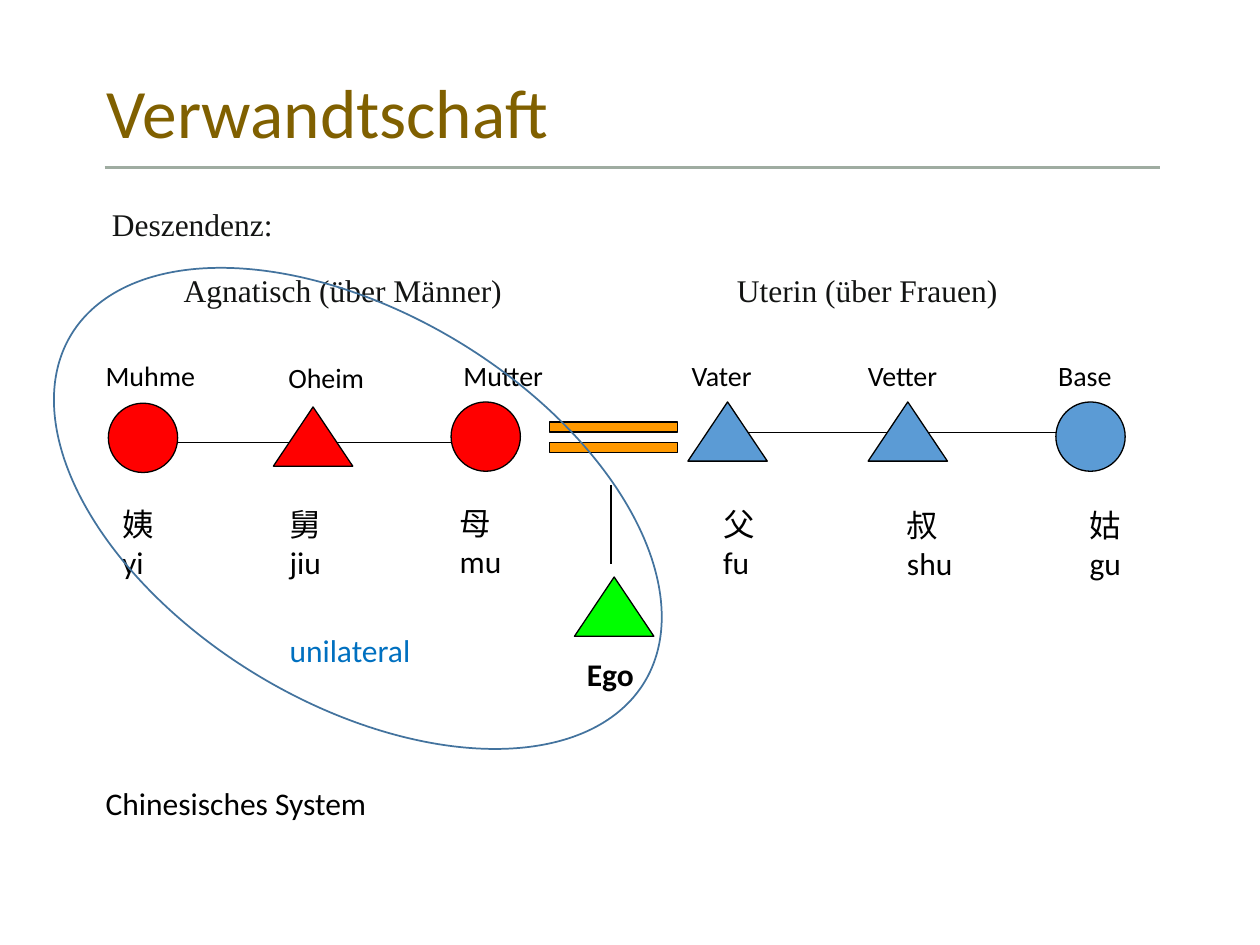
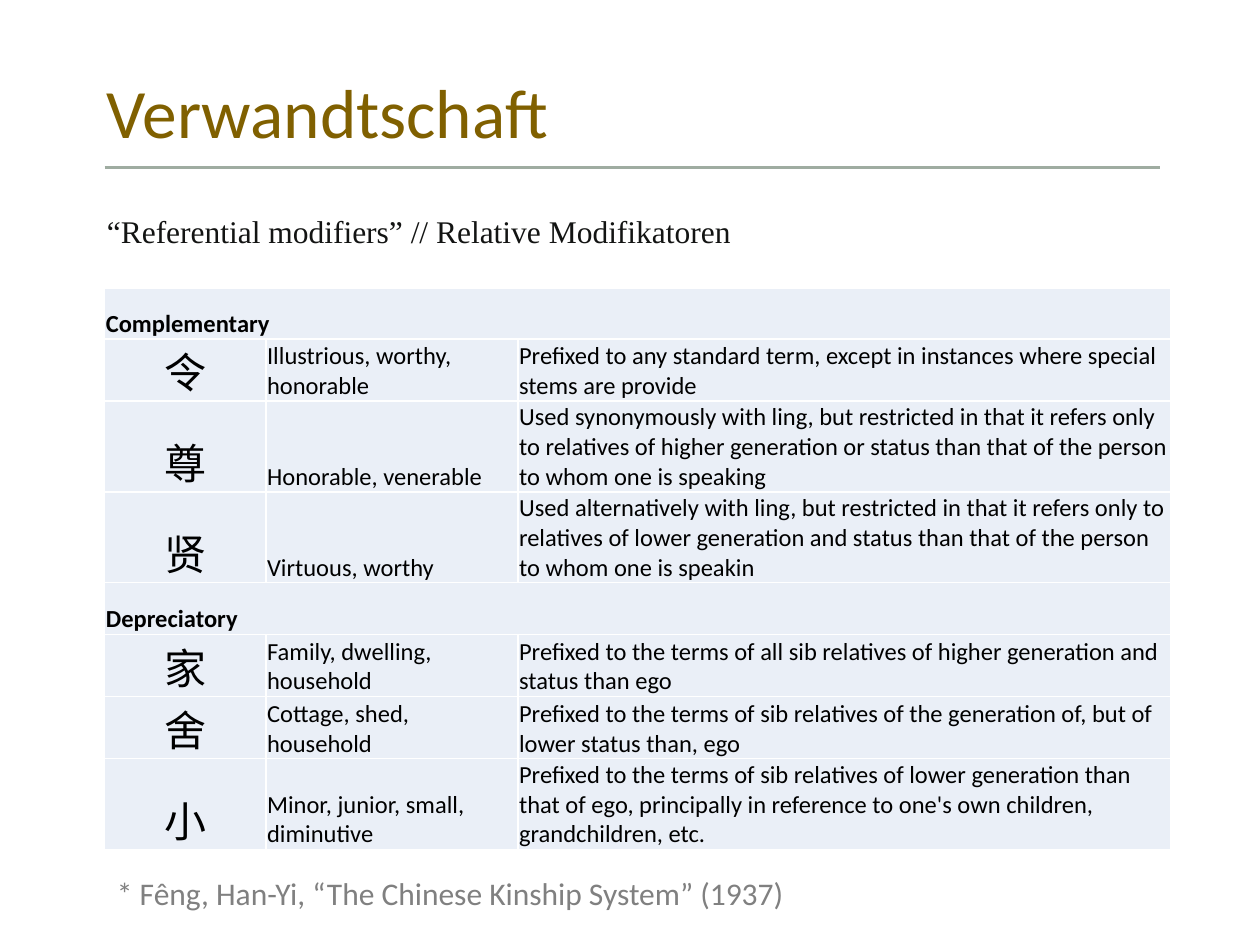
from dataclasses import dataclass

from lxml.etree import SubElement
from pptx import Presentation
from pptx.dml.color import RGBColor
from pptx.enum.shapes import MSO_CONNECTOR, MSO_SHAPE
from pptx.enum.text import MSO_ANCHOR, MSO_AUTO_SIZE, PP_ALIGN
from pptx.oxml.ns import qn
from pptx.presentation import Presentation as Deck
from pptx.shapes.autoshape import Shape
from pptx.slide import Slide
from pptx.table import _Cell as Cell
from pptx.text.text import TextFrame
from pptx.util import Emu, Pt

EMU_PER_PX = 9144
SANS = "Calibri"
SERIF = "Times New Roman"
CHINESE = "Noto Sans CJK SC"
BLACK = "000000"
WHITE = "FFFFFF"
INK = "131413"
GOLD = "806000"
RULE = "9FACA1"
RED = "FF0000"
BLUE = "5B9BD5"
GREEN = "00FF00"
ORANGE = "FF9900"
OUTLINE = "43739E"
LINK_BLUE = "0070C0"
GREY = "808080"
CELL_FILL = "EAEFF7"
CIRCLE = (MSO_SHAPE.OVAL, 55, 55)
TRIANGLE = (MSO_SHAPE.ISOSCELES_TRIANGLE, 63, 47)


@dataclass(frozen=True)
class Box:
    left: int
    top: int
    width: int
    height: int


@dataclass(frozen=True)
class Relative:
    label: str
    label_box: Box
    symbol: tuple
    left: int
    top: int
    color: str
    term: str
    term_box: Box
    wrap: bool = False


@dataclass(frozen=True)
class Modifier:
    character: str
    meaning: str
    usage: str
    height: int


@dataclass(frozen=True)
class Group:
    heading: str
    height: int
    modifiers: tuple[Modifier, ...]


RELATIVES = (
    Relative("Muhme", Box(74, 280, 92, 37), CIRCLE, 86, 320, RED, "姨\nyi", Box(87, 396, 45, 71)),
    Relative("Oheim", Box(219, 281, 81, 37), TRIANGLE, 217, 323, RED, "舅\njiu", Box(220, 396, 51, 71), True),
    Relative("Mutter", Box(358, 280, 83, 37), CIRCLE, 358, 319, RED, "母\nmu", Box(355, 395, 54, 71)),
    Relative("Vater", Box(539, 280, 73, 37), TRIANGLE, 546, 319, BLUE, "父\nfu", Box(564, 396, 45, 71)),
    Relative("Vetter", Box(679, 280, 77, 37), TRIANGLE, 689, 319, BLUE, "叔\nshu", Box(710, 397, 67, 71), True),
    Relative("Base", Box(830, 280, 63, 37), CIRCLE, 838, 319, BLUE, "姑\ngu", Box(855, 397, 45, 71)),
)

GROUPS = (
    Group("Complementary", 40, (
        Modifier("令", "Illustrious, worthy, honorable",
                 "Prefixed to any standard term, except in instances where special stems are provide", 49),
        Modifier("尊", "Honorable, venerable",
                 "Used synonymously with ling, but restricted in that it refers only to relatives "
                 "of higher generation or status than that of the person to whom one is speaking", 71),
        Modifier("贤", "Virtuous, worthy",
                 "Used alternatively with ling, but restricted in that it refers only to relatives "
                 "of lower generation and status than that of the person to whom one is speakin", 71),
    )),
    Group("Depreciatory", 41, (
        Modifier("家", "Family, dwelling, household",
                 "Prefixed to the terms of all sib relatives of higher generation and status than ego", 49),
        Modifier("舍", "Cottage, shed, household",
                 "Prefixed to the terms of sib relatives of the generation of, "
                 "but of lower status than, ego", 49),
        Modifier("小", "Minor, junior, small, diminutive",
                 "Prefixed to the terms of sib relatives of lower generation than that of ego, "
                 "principally in reference to one's own children, grandchildren, etc.", 71),
    )),
)


def px(length: int) -> Emu:
    return Emu(length * EMU_PER_PX)


def place(box: Box) -> tuple[Emu, Emu, Emu, Emu]:
    return px(box.left), px(box.top), px(box.width), px(box.height)


def color(value: str) -> RGBColor:
    return RGBColor.from_string(value)


def write_text(frame: TextFrame, text: str, *, size: float = 18, font: str = SANS,
               fill: str = BLACK, bold: bool = False, align: PP_ALIGN = PP_ALIGN.LEFT,
               line_spacing: float | None = None) -> None:
    for index, line in enumerate(text.split("\n")):
        paragraph = frame.add_paragraph() if index else frame.paragraphs[0]
        paragraph.alignment = align
        paragraph.line_spacing = line_spacing
        run = paragraph.add_run()
        run.text = line
        run.font.size = Pt(size)
        run.font.name = font
        run.font.bold = bold
        run.font.color.rgb = color(fill)
        SubElement(run.font._element, qn("a:ea"), typeface=CHINESE)


def add_label(slide: Slide, text: str, box: Box, wrap: bool = False, **text_format) -> Shape:
    label = slide.shapes.add_textbox(*place(box))
    label.text_frame.word_wrap = wrap
    label.text_frame.auto_size = MSO_AUTO_SIZE.SHAPE_TO_FIT_TEXT
    write_text(label.text_frame, text, **text_format)
    return label


def add_figure(slide: Slide, kind: MSO_SHAPE, box: Box, fill: str | None,
               line: str = BLACK, weight: float = 0.75) -> Shape:
    shape = slide.shapes.add_shape(kind, *place(box))
    shape.shadow.inherit = False
    if fill:
        shape.fill.solid()
        shape.fill.fore_color.rgb = color(fill)
    else:
        shape.fill.background()
    shape.line.color.rgb = color(line)
    shape.line.width = Pt(weight)
    return shape


def add_line(slide: Slide, start: tuple[int, int], end: tuple[int, int],
             line: str = BLACK, weight: float = 0.75) -> None:
    connector = slide.shapes.add_connector(
        MSO_CONNECTOR.STRAIGHT, *map(px, start), *map(px, end))
    connector.line.color.rgb = color(line)
    connector.line.width = Pt(weight)
    SubElement(connector._element.spPr, qn("a:effectLst"))


def add_titled_slide(presentation: Deck) -> Slide:
    slide = presentation.slides.add_slide(presentation.slide_layouts[6])
    title = add_label(slide, "Verwandtschaft", Box(75, 67, 850, 50), True,
                      size=39.6, fill=GOLD, line_spacing=0.9)
    title.text_frame.auto_size = MSO_AUTO_SIZE.NONE
    title.text_frame.vertical_anchor = MSO_ANCHOR.MIDDLE
    add_line(slide, (83, 133), (921, 133), RULE, 1.25)
    return slide


def build_kinship_slide(presentation: Deck) -> None:
    slide = add_titled_slide(presentation)
    for text, box in (
        ("Deszendenz:", Box(79, 158, 167, 40)),
        ("Agnatisch (über Männer)", Box(136, 210, 305, 40)),
        ("Uterin (über Frauen)", Box(575, 210, 249, 40)),
    ):
        add_label(slide, text, box, font=SERIF, fill=INK)

    add_line(slide, (141, 351), (365, 351))
    add_line(slide, (594, 343), (838, 343))
    add_line(slide, (485, 385), (485, 448))
    for top in (335, 351):
        add_figure(slide, MSO_SHAPE.RECTANGLE, Box(436, top, 102, 8), ORANGE)

    for relative in RELATIVES:
        kind, width, height = relative.symbol
        add_figure(slide, kind, Box(relative.left, relative.top, width, height), relative.color)
        add_label(slide, relative.label, relative.label_box, size=16)
        add_label(slide, relative.term, relative.term_box, relative.wrap)

    kind, width, height = TRIANGLE
    add_figure(slide, kind, Box(456, 458, width, height), GREEN)
    add_label(slide, "Ego", Box(456, 515, 67, 40), bold=True)
    add_label(slide, "Chinesisches System", Box(74, 617, 229, 40))
    lineage = add_figure(slide, MSO_SHAPE.OVAL, Box(18, 249, 532, 309), None, OUTLINE, 1)
    lineage.rotation = 31.2
    add_label(slide, "unilateral", Box(220, 496, 117, 40), fill=LINK_BLUE)


def style_cell(cell: Cell) -> None:
    properties = cell._tc.get_or_add_tcPr()
    for side in ("lnL", "lnR", "lnT", "lnB"):
        border = SubElement(properties, qn(f"a:{side}"), w=str(Pt(1)))
        SubElement(SubElement(border, qn("a:solidFill")), qn("a:srgbClr"), val=WHITE)
    cell.fill.solid()
    cell.fill.fore_color.rgb = color(CELL_FILL)
    cell.vertical_anchor = MSO_ANCHOR.BOTTOM
    cell.margin_left = cell.margin_right = cell.margin_top = px(1)
    cell.margin_bottom = 0


def add_modifier_table(slide: Slide) -> None:
    rows = [row for group in GROUPS for row in (group, *group.modifiers)]
    widths = (128, 200, 518)
    box = Box(83, 229, sum(widths), sum(row.height for row in rows))
    table = slide.shapes.add_table(len(rows), len(widths), *place(box)).table
    table.first_row = False
    table.horz_banding = False
    for column, width in zip(table.columns, widths):
        column.width = px(width)
    for index, row in enumerate(rows):
        table.rows[index].height = px(row.height)
        cells = [table.cell(index, column) for column in range(len(widths))]
        for cell in cells:
            style_cell(cell)
        if isinstance(row, Group):
            cells[0].merge(cells[-1])
            write_text(cells[0].text_frame, row.heading, size=14, bold=True)
        else:
            write_text(cells[0].text_frame, row.character, size=24, align=PP_ALIGN.CENTER)
            write_text(cells[1].text_frame, row.meaning, size=14)
            write_text(cells[2].text_frame, row.usage, size=14)


def build_modifier_slide(presentation: Deck) -> None:
    slide = add_titled_slide(presentation)
    add_modifier_table(slide)
    add_label(slide, "“Referential modifiers” // Relative Modifikatoren",
              Box(75, 163, 546, 40), font=SERIF, fill=INK)
    add_label(slide, "* Fêng, Han-Yi, “The Chinese Kinship System” (1937)",
              Box(83, 689, 568, 40), fill=GREY)


def main() -> None:
    presentation = Presentation()
    presentation.slide_width = px(1000)
    presentation.slide_height = px(750)
    build_kinship_slide(presentation)
    build_modifier_slide(presentation)
    presentation.save("out.pptx")


if __name__ == "__main__":
    main()
